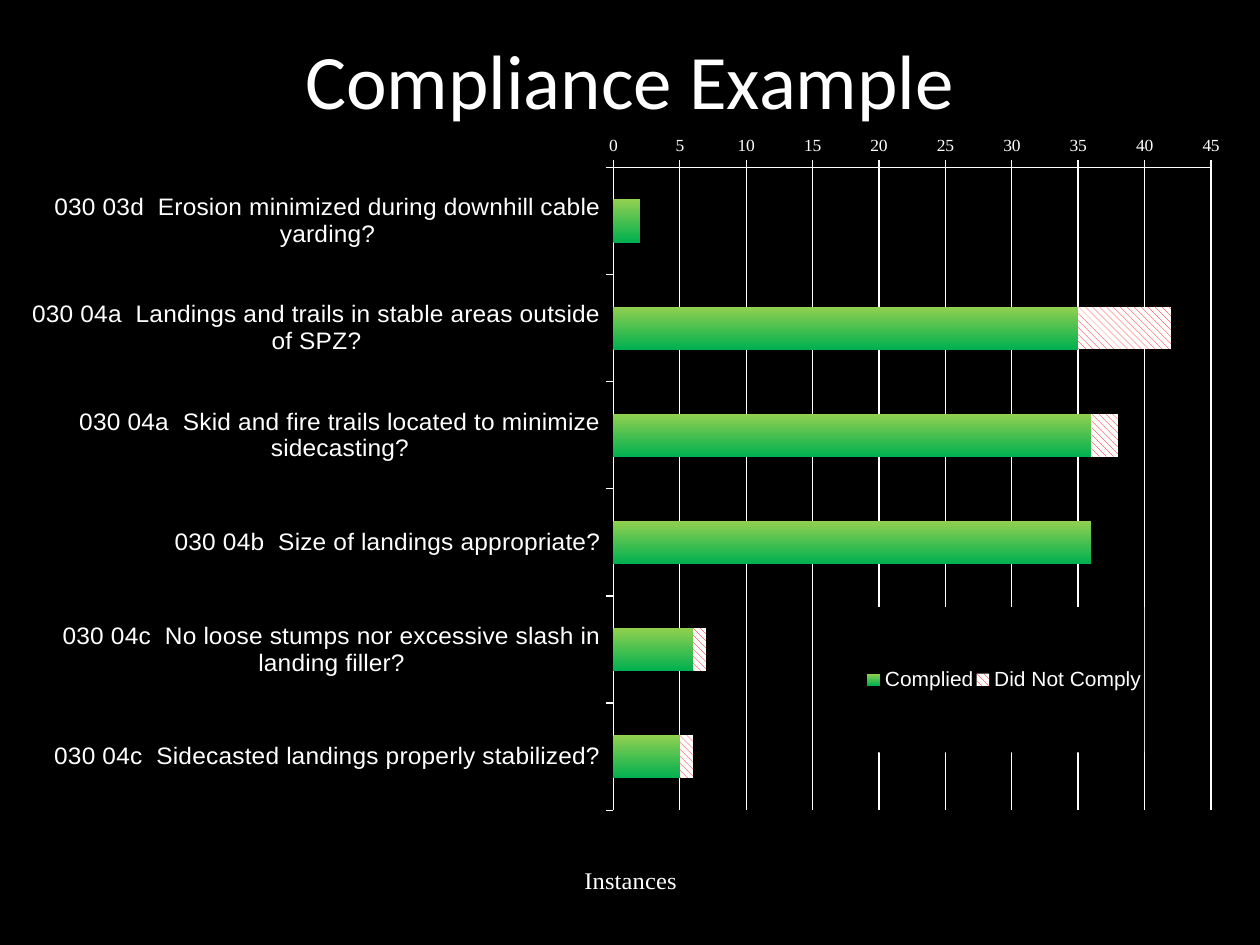
from pptx import Presentation, util as u
from pptx.chart.data import CategoryChartData
from pptx.dml.color import RGBColor
from pptx.enum import chart as ch, dml, text
from pptx.oxml import parse_xml
from pptx.oxml.ns import nsdecls, qn

BLACK = RGBColor(0, 0, 0)
WHITE = RGBColor(255, 255, 255)
LIME = RGBColor(0x92, 0xD0, 0x50)
GREEN = RGBColor(0, 0xB0, 0x50)
RED = RGBColor(255, 0, 0)
SCALE = 914400 / 126  # EMU per px

CHECKS = [  # question, complied, did not comply
    ("030 03d  Erosion minimized during downhill cable yarding?", 2, 0),
    ("030 04a  Landings and trails in stable areas outside of SPZ?", 35, 7),
    ("030 04a  Skid and fire trails located to minimize sidecasting?", 36, 2),
    ("030 04b  Size of landings appropriate?", 36, 0),
    ("030 04c  No loose stumps nor excessive slash in landing filler?", 6, 1),
    ("030 04c  Sidecasted landings properly stabilized?", 5, 1),
]


def px(n):
    return u.Emu(round(n * SCALE))


def style(font, name, size):
    font.name, font.size, font.bold = name, u.Pt(size), False
    font.color.rgb = WHITE


def place(part, index, x, y, w=None, h=None, inner=False):
    """Give a chart part a fixed layout, in shares of the chart's size."""
    for old in part.findall(qn("c:layout")):
        part.remove(old)
    tags = [("xMode", "edge"), ("yMode", "edge"), ("x", x), ("y", y)]
    if inner:
        tags.insert(0, ("layoutTarget", "inner"))
    if w:
        tags += [("w", w), ("h", h)]
    body = "".join(f'<c:{tag} val="{val}"/>' for tag, val in tags)
    part.insert(index, parse_xml(
        f'<c:layout {nsdecls("c")}><c:manualLayout>{body}'
        '</c:manualLayout></c:layout>'))


class Deck:
    def __init__(self, wide, high):
        self.prs = Presentation()
        self.prs.slide_width, self.prs.slide_height = px(wide), px(high)
        self.slide = self.prs.slides.add_slide(self.prs.slide_layouts[5])
        fill = self.slide.background.fill
        fill.solid()
        fill.fore_color.rgb = BLACK

    def title(self, words, x, y, w, h):
        box = self.slide.shapes.title
        box.left, box.top, box.width, box.height = map(px, (x, y, w, h))
        frame = box.text_frame
        frame.text = words
        frame.vertical_anchor = text.MSO_ANCHOR.MIDDLE
        para = frame.paragraphs[0]
        para.alignment = text.PP_ALIGN.CENTER
        style(para.font, "Calibri", 44)

    def bars(self, rows, names, x, y, w, h):
        data = CategoryChartData()
        cats, *cols = zip(*rows)
        data.categories = cats
        for name, vals in zip(names, cols):
            data.add_series(name, vals)
        chart = self.slide.shapes.add_chart(
            ch.XL_CHART_TYPE.BAR_STACKED, *map(px, (x, y, w, h)), data).chart
        style(chart.font, "Calibri", 10)
        chart.has_title = False
        plot = chart.plots[0]
        plot.gap_width, plot.overlap = 150, 100
        plot.vary_by_categories = False
        return chart

    def axis(self, axis, name, size):
        style(axis.tick_labels.font, name, size)
        axis.major_tick_mark = ch.XL_TICK_MARK.OUTSIDE
        axis.minor_tick_mark = ch.XL_TICK_MARK.NONE
        axis.format.line.color.rgb = WHITE

    def legend(self, chart, x, y, w, h):
        chart.has_legend = True
        key = chart.legend
        key.position = ch.XL_LEGEND_POSITION.RIGHT
        key.include_in_layout = True
        style(key.font, "Arial", 12)
        node = chart.element.find(".//" + qn("c:legend"))
        place(node, 1, x, y, w, h)
        node.find(qn("c:overlay")).addnext(parse_xml(
            f'<c:spPr {nsdecls("c", "a")}><a:solidFill>'
            f'<a:srgbClr val="{BLACK}"/></a:solidFill></c:spPr>'))


def main():
    deck = Deck(1260, 945)
    deck.title("Compliance Example", 63, 0, 1134, 158)

    # Stacked bars
    chart = deck.bars(CHECKS, ("Complied", "Did Not Comply"),
                      32, 136, 1197, 766)
    good, bad = (item.format.fill for item in chart.plots[0].series)
    good.gradient()
    good.gradient_angle = 270
    for stop, color in zip(good.gradient_stops, (LIME, GREEN)):
        stop.color.rgb = color
    bad.patterned()
    bad.pattern = dml.MSO_PATTERN.WIDE_DOWNWARD_DIAGONAL
    bad.fore_color.rgb, bad.back_color.rgb = RED, WHITE

    # Axes
    cat, val = chart.category_axis, chart.value_axis
    deck.axis(cat, "Arial", 14)
    cat.reverse_order = True
    cat.crosses = ch.XL_AXIS_CROSSES.MAXIMUM
    deck.axis(val, "Times New Roman", 10)
    val.minimum_scale, val.maximum_scale, val.major_unit = 0, 45, 5
    val.has_major_gridlines = True
    val.major_gridlines.format.line.color.rgb = WHITE
    frame = val.axis_title.text_frame
    frame.text = "Instances"
    style(frame.paragraphs[0].font, "Times New Roman", 14)

    # Fixed places inside the chart
    area = chart.element.find(".//" + qn("c:plotArea"))
    place(area, 0, 0.485, 0.025, 0.5, 0.864, inner=True)
    place(area.find(".//" + qn("c:title")), 1, 0.457, 0.957)
    deck.legend(chart, 0.695, 0.616, 0.234, 0.195)

    deck.prs.save("out.pptx")


if __name__ == "__main__":
    main()
